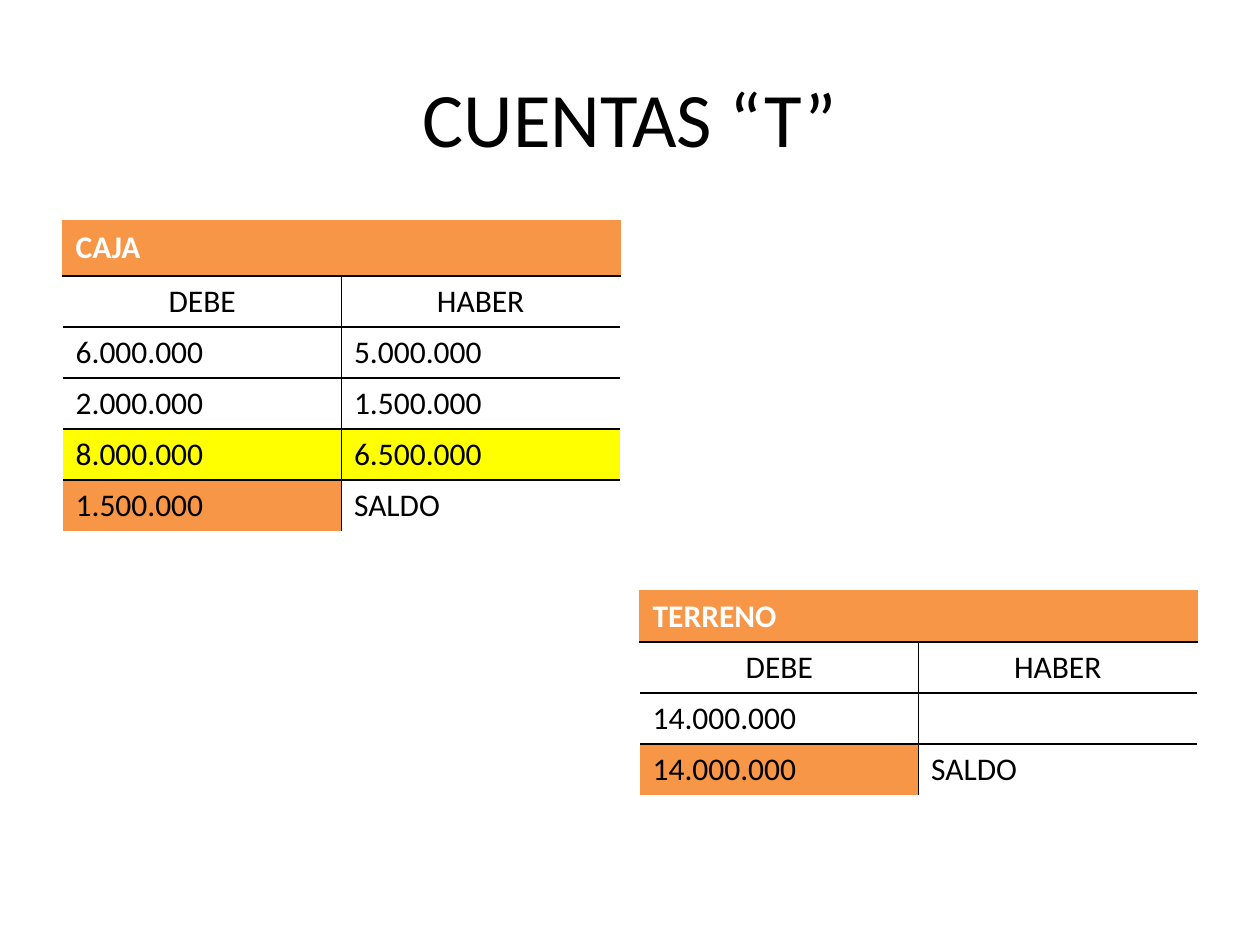
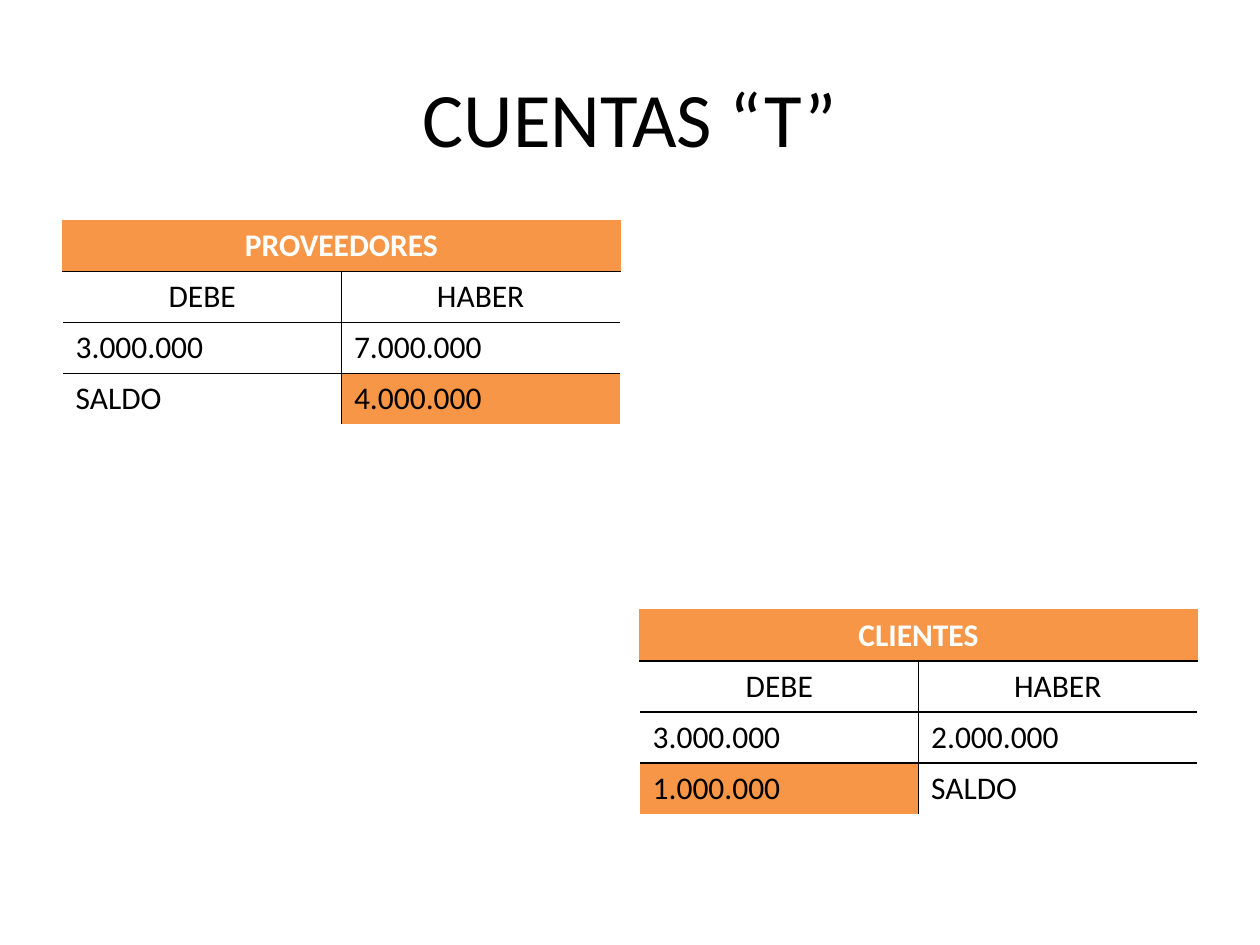
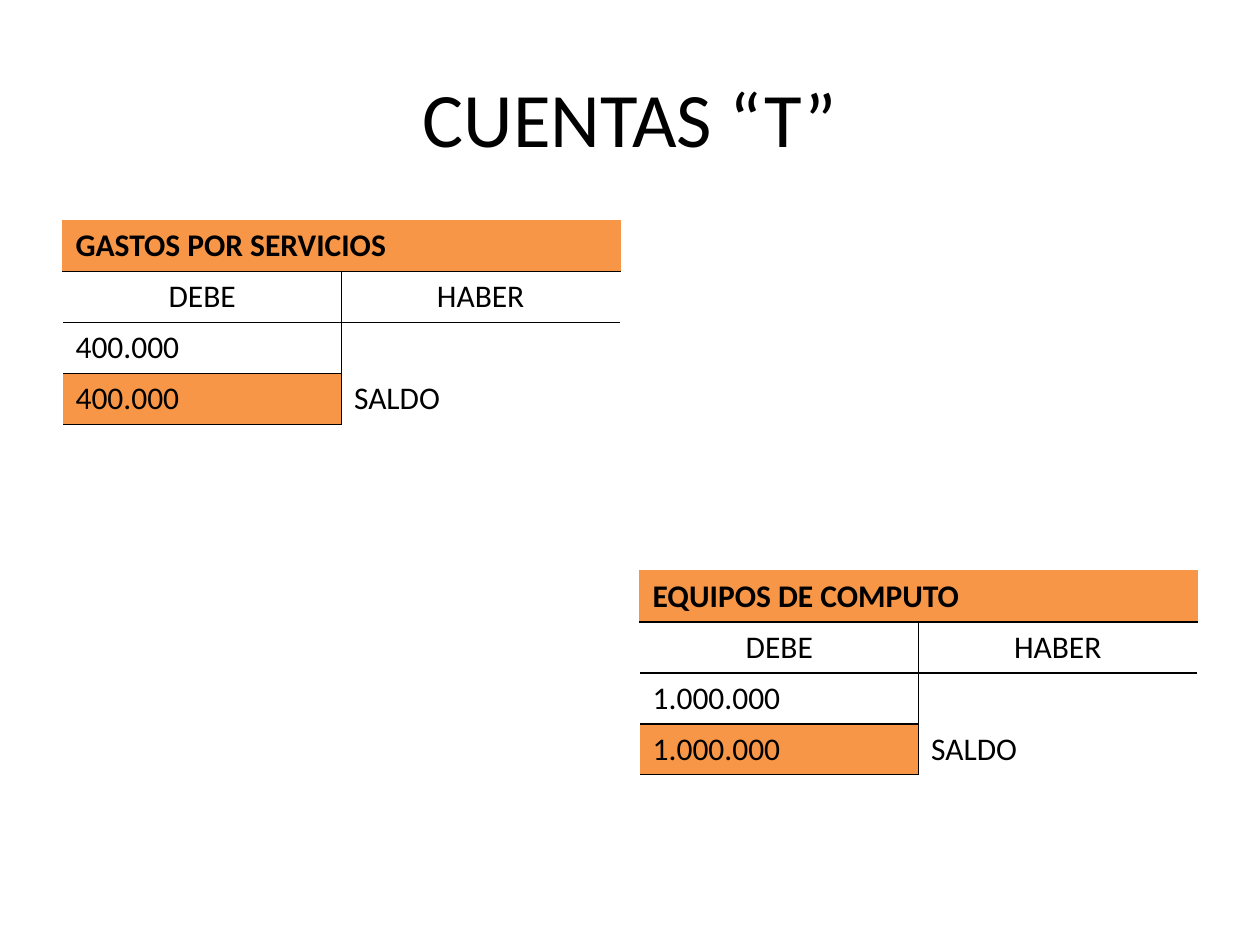
from lxml import etree
from pptx import Presentation
from pptx.dml.color import RGBColor
from pptx.enum.text import MSO_ANCHOR, PP_ALIGN
from pptx.oxml.ns import qn
from pptx.util import Inches, Pt

LEFT = PP_ALIGN.LEFT
CENTER = PP_ALIGN.CENTER
MIDDLE = MSO_ANCHOR.MIDDLE
TOP = MSO_ANCHOR.TOP

FONT = "Calibri"
BLACK = "000000"
WHITE = "FFFFFF"
ORANGE = "F79646"
YELLOW = "FFFF00"

TITLE = "CUENTAS “T”"
BALANCE = "SALDO"
SIDES = ("L", "R", "T", "B")
COLUMN_WIDTH = 2.21
ROW_HEIGHT = 1.62 / 4
LEFT_ACCOUNT = (0.5, 1.75)
RIGHT_ACCOUNT_X = 5.08


def color(hex_value):
    return RGBColor.from_string(hex_value)


def write_text(text_frame, text, size=18, font_color=BLACK, bold=False, align=LEFT):
    paragraph = text_frame.paragraphs[0]
    paragraph.alignment = align
    paragraph.font.size = Pt(size)
    if text:
        run = paragraph.add_run()
        run.text = text
        run.font.name = FONT
        run.font.size = Pt(size)
        run.font.bold = bold
        run.font.color.rgb = color(font_color)


def add_title(slide):
    box = slide.shapes.add_textbox(Inches(0.5), Inches(0.3), Inches(9), Inches(1.25))
    box.text_frame.word_wrap = True
    box.text_frame.vertical_anchor = MIDDLE
    write_text(box.text_frame, TITLE, size=44, align=CENTER)


def set_borders(cell, side_colors):
    properties = cell._tc.get_or_add_tcPr()
    for position, side in enumerate(SIDES):
        line = etree.Element(qn(f"a:ln{side}"), w=str(Pt(1)))
        if side in side_colors:
            fill = etree.SubElement(line, qn("a:solidFill"))
            etree.SubElement(fill, qn("a:srgbClr"), val=side_colors[side])
        else:
            etree.SubElement(line, qn("a:noFill"))
        properties.insert(position, line)


def format_cell(cell, fill_color, side_colors):
    if fill_color:
        cell.fill.solid()
        cell.fill.fore_color.rgb = color(fill_color)
    else:
        cell.fill.background()
    set_borders(cell, side_colors)


def add_header(table, name, font_color, align, anchor):
    first, second = table.cell(0, 0), table.cell(0, 1)
    first.merge(second)
    edges = {"L": ORANGE, "T": ORANGE, "R": ORANGE, "B": BLACK}
    for cell in (first, second):
        format_cell(cell, ORANGE, edges)
    first.vertical_anchor = anchor
    write_text(first.text_frame, name, font_color=font_color, bold=True, align=align)


def body_borders(row, column, last_row, open_balance):
    lines = {"R" if column == 0 else "L"}
    open_cell = open_balance and column == 1
    if not (open_cell and row == last_row):
        lines.add("T")
    if open_balance and column == 0 or row < last_row and not (open_cell and row > 1):
        lines.add("B")
    return {side: BLACK for side in lines}


def add_account(slide, position, name, entries, header_color=WHITE, header_align=LEFT,
                header_anchor=TOP, header_height=ROW_HEIGHT, totals_row=None,
                open_balance=False):
    rows = [("DEBE", "HABER")] + entries
    last_row = len(rows)
    left, top = position
    height = header_height + last_row * ROW_HEIGHT
    frame = slide.shapes.add_table(last_row + 1, 2, Inches(left), Inches(top),
                                   Inches(2 * COLUMN_WIDTH), Inches(height))
    table = frame.table
    table.first_row = False
    table.horz_banding = False
    for column in table.columns:
        column.width = Inches(COLUMN_WIDTH)
    for row in table.rows:
        row.height = Inches(ROW_HEIGHT)
    table.rows[0].height = Inches(header_height)
    add_header(table, name, header_color, header_align, header_anchor)

    for row, values in enumerate(rows, start=1):
        for column, value in enumerate(values):
            cell = table.cell(row, column)
            fill_color = None
            if row == totals_row:
                fill_color = YELLOW
            elif row == last_row and value != BALANCE:
                fill_color = ORANGE
            format_cell(cell, fill_color, body_borders(row, column, last_row, open_balance))
            write_text(cell.text_frame, value, align=CENTER if row == 1 else LEFT)


def add_account_slide(presentation, accounts):
    slide = presentation.slides.add_slide(presentation.slide_layouts[6])
    add_title(slide)
    for position, name, entries, options in accounts:
        add_account(slide, position, name, entries, **options)


def main():
    presentation = Presentation()
    presentation.slide_width = Inches(10)
    presentation.slide_height = Inches(7.5)

    centered = {"header_align": CENTER}
    expense = {"header_color": BLACK, "open_balance": True}
    add_account_slide(presentation, [
        (LEFT_ACCOUNT, "CAJA",
         [("6.000.000", "5.000.000"), ("2.000.000", "1.500.000"),
          ("8.000.000", "6.500.000"), ("1.500.000", BALANCE)],
         {"header_height": 0.44, "header_anchor": MIDDLE, "totals_row": 4}),
        ((RIGHT_ACCOUNT_X, 4.69), "TERRENO",
         [("14.000.000", ""), ("14.000.000", BALANCE)], {}),
    ])
    add_account_slide(presentation, [
        (LEFT_ACCOUNT, "PROVEEDORES",
         [("3.000.000", "7.000.000"), (BALANCE, "4.000.000")], centered),
        ((RIGHT_ACCOUNT_X, 4.84), "CLIENTES",
         [("3.000.000", "2.000.000"), ("1.000.000", BALANCE)], centered),
    ])
    add_account_slide(presentation, [
        (LEFT_ACCOUNT, "GASTOS POR SERVICIOS",
         [("400.000", ""), ("400.000", BALANCE)], expense),
        ((RIGHT_ACCOUNT_X, 4.53), "EQUIPOS DE COMPUTO",
         [("1.000.000", ""), ("1.000.000", BALANCE)], expense),
    ])
    presentation.save("out.pptx")


if __name__ == "__main__":
    main()
